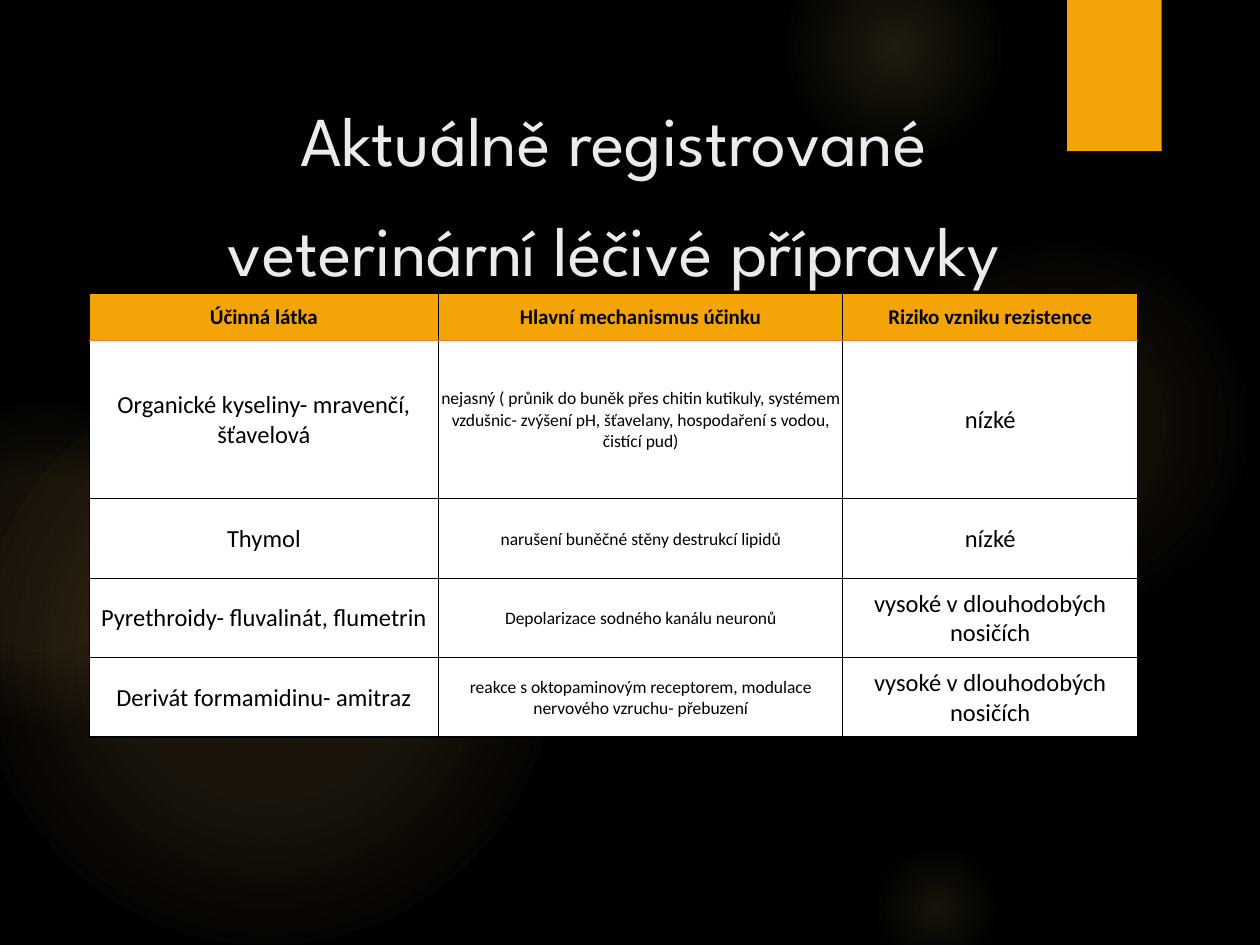
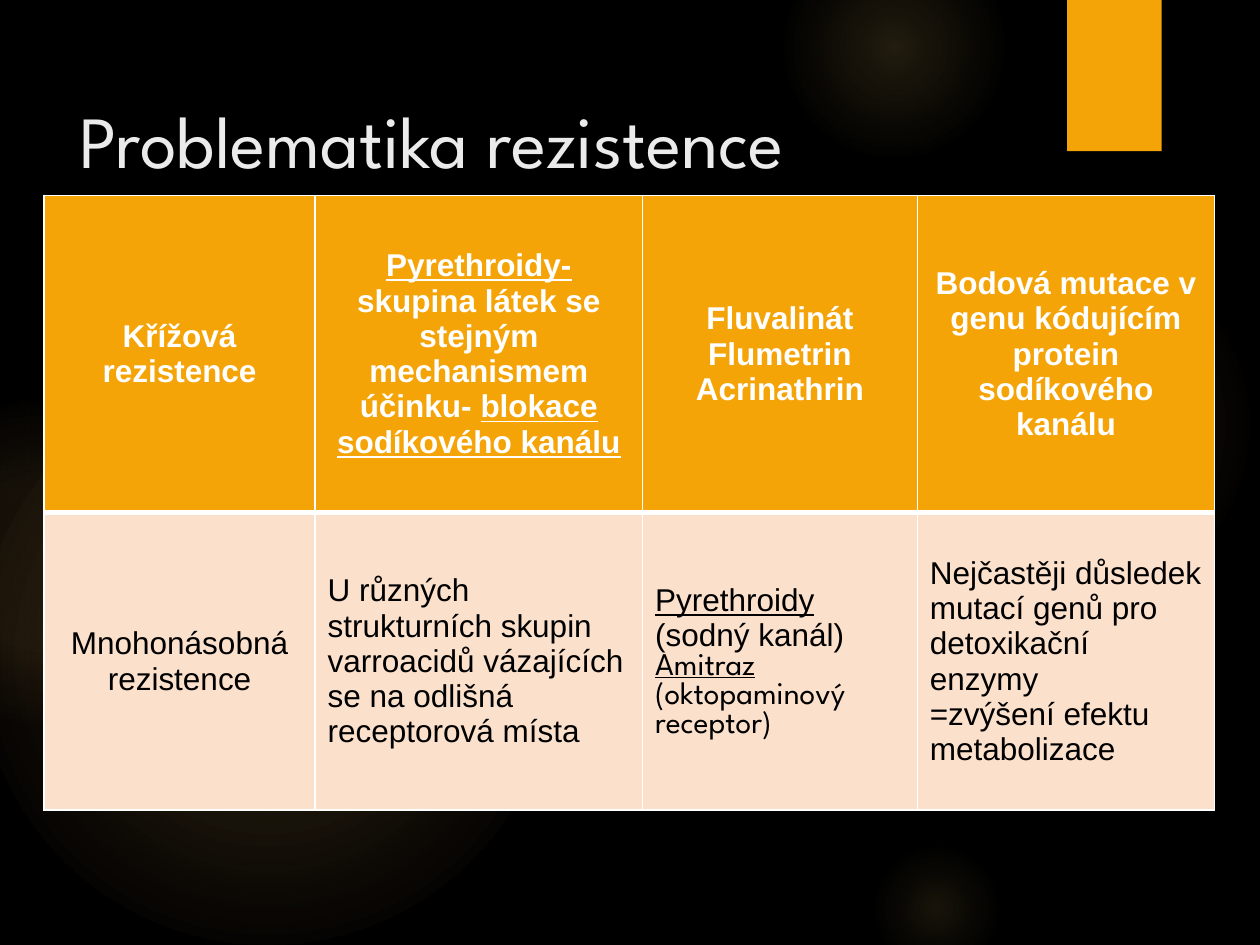
from dataclasses import dataclass

from lxml import etree
from pptx import Presentation
from pptx.dml.color import RGBColor
from pptx.enum.shapes import MSO_SHAPE
from pptx.enum.text import MSO_ANCHOR, MSO_AUTO_SIZE, PP_ALIGN
from pptx.oxml.ns import qn
from pptx.util import Inches, Pt

OVAL, RECT = MSO_SHAPE.OVAL, MSO_SHAPE.RECTANGLE
LEFT, CENTER = PP_ALIGN.LEFT, PP_ALIGN.CENTER
TOP, MIDDLE = MSO_ANCHOR.TOP, MSO_ANCHOR.MIDDLE
NO_AUTOFIT = MSO_AUTO_SIZE.NONE
TITLE_ONLY = 5


@dataclass(frozen=True)
class Theme:
    black: str = "000000"
    white: str = "FFFFFF"
    amber: str = "F5A408"
    glow: str = "FAC96A"
    title: str = "EBEBEB"
    peach: str = "FBE0CC"
    rule: str = "ED7D31"
    title_font: str = "League Spartan"
    drug_font: str = "Calibri"
    resistance_font: str = "Arial"
    title_spacing: float = 1.3
    head_size: int = 12
    drug_sizes: tuple = (14, 10, 14)
    resistance_size: int = 18


THEME = Theme()

GLOWS = [
    (6.89, 1.83, 3.08, [(0, 7), (36, 6), (69, 0)]),
    (6.22, -0.5, 1.75, [(0, 14), (36, 7), (73, 0)]),
    (6.89, 6.67, 1.08, [(0, 10), (31, 5), (66, 0)]),
    (-0.17, 2.92, 4.58, [(0, 11), (36, 10), (75, 0)]),
    (-0.92, 3.17, 2.58, [(0, 8), (36, 8), (72, 0)]),
]

DRUGS = [
    ["Účinná látka", "Hlavní mechanismus účinku", "Riziko vzniku rezistence"],
    ["Organické kyseliny- mravenčí, šťavelová",
     "nejasný ( průnik do buněk přes chitin kutikuly, systémem vzdušnic- "
     "zvýšení pH, šťavelany, hospodaření s vodou, čistící pud)",
     "nízké"],
    ["Thymol", "narušení buněčné stěny destrukcí lipidů", "nízké"],
    ["Pyrethroidy- fluvalinát, flumetrin",
     "Depolarizace sodného kanálu neuronů",
     "vysoké v dlouhodobých nosičích"],
    ["Derivát formamidinu- amitraz",
     "reakce s oktopaminovým receptorem, modulace nervového vzruchu- přebuzení",
     "vysoké v dlouhodobých nosičích"],
]

RESISTANCE = [
    ["Křížová rezistence",
     "_Pyrethroidy-_ skupina látek se stejným mechanismem účinku- "
     "_blokace sodíkového kanálu_",
     "Fluvalinát\nFlumetrin\nAcrinathrin",
     "Bodová mutace v genu kódujícím protein sodíkového kanálu"],
    ["Mnohonásobná rezistence",
     "U různých strukturních skupin varroacidů vázajících se na odlišná "
     "receptorová místa",
     "_Pyrethroidy_ (sodný kanál)\n_Amitraz_\n(oktopaminový receptor)",
     "Nejčastěji důsledek mutací genů pro detoxikační enzymy\v"
     "=zvýšení efektu metabolizace"],
]


def rgb(color):
    return RGBColor.from_string(color)


def add_xml(parent, tag, **attrs):
    return etree.SubElement(parent, qn(tag), {k: str(v) for k, v in attrs.items()})


def add_color(parent, color, alpha=100):
    clr = add_xml(parent, "a:srgbClr", val=color)
    add_xml(clr, "a:alpha", val=alpha * 1000)


def add_plain_shape(slide, kind, left, top, width, height):
    sp = slide.shapes.add_shape(
        kind, Inches(left), Inches(top), Inches(width), Inches(height))
    sp.shadow.inherit = False
    sp.line.fill.background()
    return sp


def add_glow(slide, left, top, size, stops):
    sp = add_plain_shape(slide, OVAL, left, top, size, size)
    grad = etree.Element(qn("a:gradFill"), rotWithShape="1")
    stop_list = add_xml(grad, "a:gsLst")
    for position, alpha in stops:
        stop = add_xml(stop_list, "a:gs", pos=position * 1000)
        add_color(stop, THEME.glow, alpha)
    circle = add_xml(grad, "a:path", path="circle")
    add_xml(circle, "a:fillToRect", l=50000, t=50000, r=50000, b=50000)
    sp.element.spPr.find(qn("a:prstGeom")).addnext(grad)
    return sp


def add_band(slide):
    sp = add_plain_shape(slide, RECT, 8.47, 0, 0.75, 1.2)
    sp.fill.solid()
    sp.fill.fore_color.rgb = rgb(THEME.amber)
    effects = sp.element.spPr.find(qn("a:effectLst"))
    shadow = add_xml(effects, "a:outerShdw", blurRad=Pt(3), dist=Pt(2),
                     dir=5400000, rotWithShape=0)
    add_color(shadow, THEME.black, 45)
    return sp


def decorate_layout(prs, layout, slide):
    fill = prs.slide_master.background.fill
    fill.solid()
    fill.fore_color.rgb = rgb(THEME.black)
    shapes = [add_glow(slide, *glow) for glow in GLOWS] + [add_band(slide)]
    for sp in shapes:
        layout.shapes.element.append(sp.element)


def set_title(slide, text, box, size, align):
    sp = slide.shapes.title
    sp.left, sp.top, sp.width, sp.height = map(Inches, box)
    tf = sp.text_frame
    tf.text = text
    tf.word_wrap = True
    tf.auto_size = NO_AUTOFIT
    tf.vertical_anchor = TOP
    p = tf.paragraphs[0]
    p.alignment = align
    p.line_spacing = THEME.title_spacing
    style_font(p.runs[0].font, THEME.title_font, size, THEME.title)


def style_font(font, name, size, color, bold=False):
    font.name = name
    font.size = Pt(size)
    font.color.rgb = rgb(color)
    font.bold = bold


def write_paragraph(p, text):
    for i, part in enumerate(text.split("_")):
        for j, piece in enumerate(part.split("\v")):
            if j:
                p.add_line_break()
            if piece:
                r = p.add_run()
                r.text = piece
                r.font.underline = i % 2 == 1


def fill_cell(cell, text, fill, align, **font):
    cell.fill.solid()
    cell.fill.fore_color.rgb = rgb(fill)
    cell.vertical_anchor = MIDDLE
    tf = cell.text_frame
    for i, line in enumerate(text.split("\n")):
        p = tf.add_paragraph() if i else tf.paragraphs[0]
        p.alignment = align
        write_paragraph(p, line)
        for r in p.runs:
            style_font(r.font, **font)


def set_borders(cell, left, right, top, bottom):
    tc_pr = cell._tc.get_or_add_tcPr()
    sides = zip("LRTB", (left, right, top, bottom))
    for i, (side, (color, width)) in enumerate(sides):
        ln = etree.Element(qn(f"a:ln{side}"), w=str(Pt(width)))
        add_color(add_xml(ln, "a:solidFill"), color)
        tc_pr.insert(i, ln)


def add_grid(slide, left, top, widths, heights):
    table = slide.shapes.add_table(
        len(heights), len(widths), Inches(left), Inches(top),
        Inches(sum(widths)), Inches(sum(heights))).table
    table.first_row = table.horz_banding = False
    for column, width in zip(table.columns, widths):
        column.width = Inches(width)
    for row, height in zip(table.rows, heights):
        row.height = Inches(height)
    return table


def add_drug_table(slide):
    table = add_grid(slide, 0.71, 2.33, [2.77, 3.21, 2.34],
                     [0.37, 1.26, 0.63, 0.63, 0.63])
    outer, inner, rule = (THEME.black, 1), (THEME.black, 0.5), (THEME.rule, 0.5)
    last_row, last_col = len(DRUGS) - 1, len(DRUGS[0]) - 1
    for i, row in enumerate(DRUGS):
        for j, text in enumerate(row):
            cell = table.cell(i, j)
            head = i == 0
            cell.margin_left = cell.margin_right = cell.margin_top = Inches(0.01)
            cell.margin_bottom = 0
            fill_cell(cell, text, THEME.amber if head else THEME.white, CENTER,
                      name=THEME.drug_font, color=THEME.black, bold=head,
                      size=THEME.head_size if head else THEME.drug_sizes[j])
            set_borders(cell,
                        left=outer if j == 0 else inner,
                        right=outer if j == last_col else inner,
                        top=outer if head else rule if i == 1 else inner,
                        bottom=rule if head else outer if i == last_row else inner)


def add_resistance_table(slide):
    table = add_grid(slide, 0.35, 1.55, [2.15, 2.6, 2.18, 2.36], [2.52, 2.36])
    thin, thick = (THEME.white, 1), (THEME.white, 3)
    for i, row in enumerate(RESISTANCE):
        for j, text in enumerate(row):
            cell = table.cell(i, j)
            head = i == 0
            fill_cell(cell, text, THEME.amber if head else THEME.peach,
                      CENTER if head or j == 0 else LEFT,
                      name=THEME.resistance_font, size=THEME.resistance_size,
                      color=THEME.white if head else THEME.black, bold=head)
            set_borders(cell, left=thin, right=thin,
                        top=thin if head else thick,
                        bottom=thick if head else thin)
    for p in table.cell(1, 2).text_frame.paragraphs[1:]:
        for r in p.runs:
            r.font.name = THEME.title_font


def main():
    prs = Presentation()
    prs.slide_width, prs.slide_height = Inches(10), Inches(7.5)
    layout = prs.slide_layouts[TITLE_ONLY]

    drugs = prs.slides.add_slide(layout)
    decorate_layout(prs, layout, drugs)
    set_title(drugs, "Aktuálně registrované veterinární léčivé přípravky",
              (1.01, 0.52, 7.72, 1.53), 40, CENTER)
    add_drug_table(drugs)

    resistance = prs.slides.add_slide(layout)
    set_title(resistance, "Problematika rezistence",
              (0.53, 0.49, 7.72, 1.05), 42, LEFT)
    add_resistance_table(resistance)

    prs.save("out.pptx")


if __name__ == "__main__":
    main()
